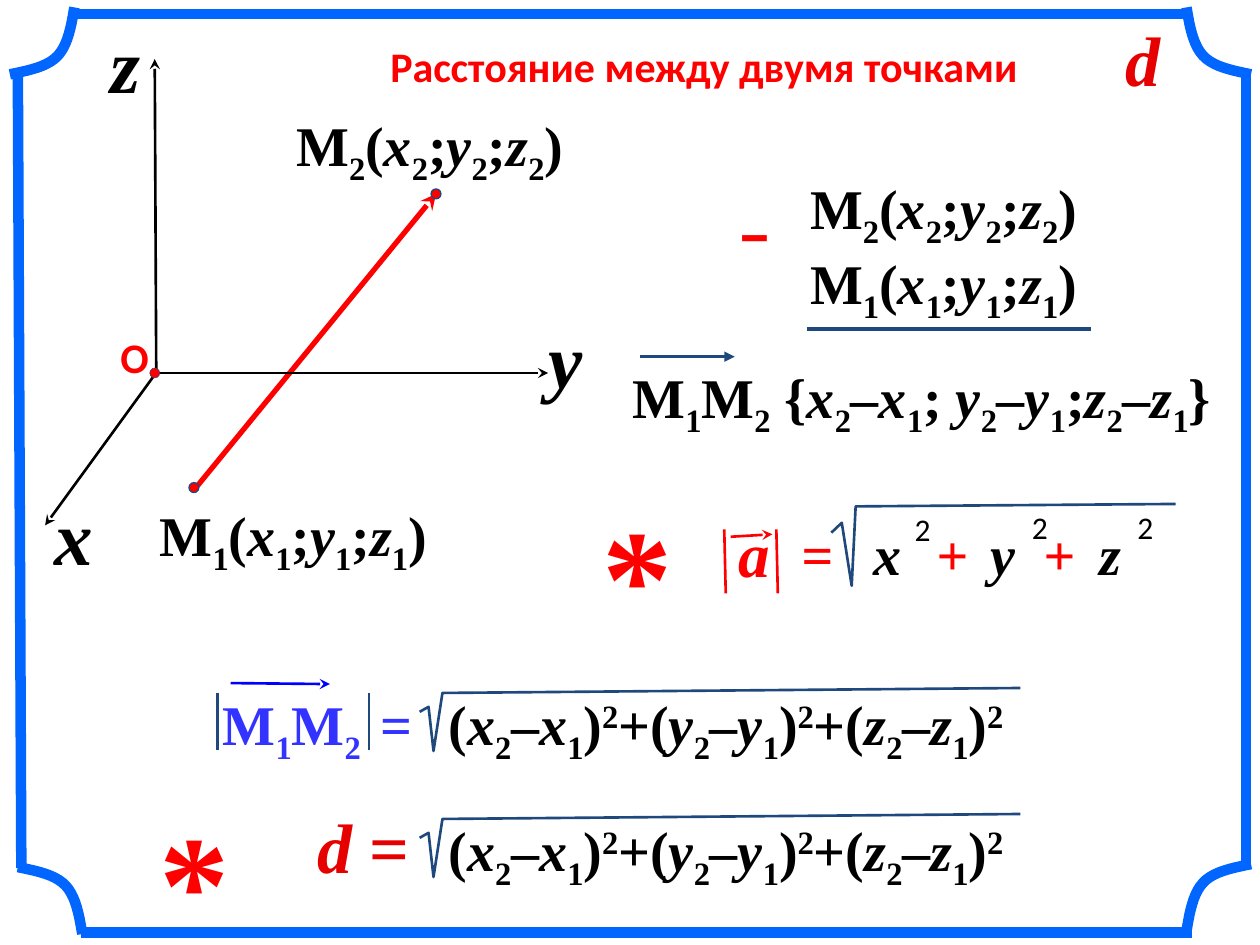
from itertools import groupby

from lxml import etree
from pptx import Presentation
from pptx.dml.color import RGBColor
from pptx.enum.shapes import MSO_CONNECTOR, MSO_SHAPE
from pptx.enum.text import MSO_AUTO_SIZE
from pptx.oxml.ns import qn
from pptx.util import Cm, Pt

STRAIGHT = MSO_CONNECTOR.STRAIGHT
OVAL = MSO_SHAPE.OVAL
GROW = MSO_AUTO_SIZE.SHAPE_TO_FIT_TEXT
SERIF, SANS = "Times New Roman", "Calibri"
BLACK, RED, DARK_RED = "000000", "FF0000", "E60000"
NAVY, BLUE, VIOLET, FRAME = "1F497D", "0000FF", "3333FF", "0066FF"
VARIABLES = "xyzad"
BASELINES = {"_": "-25000", "^": "30000"}
POINT_LABEL = "M_{0}(x_{0};y_{0};z_{0})"
DISTANCE = "(x_2–x_1)^2+(y_2–y_1)^2+(z_2–z_1)^2"
CORNER = [(0, 0), (0.38, 0.08), (0.76, 0.15), (0.97, 0.38), (1.17, 0.6), (1.24, 0.98), (1.3, 1.35)]


def color(value):
    """Return the colour for a hex string."""
    return RGBColor.from_string(value)


def styled_characters(markup):
    """Yield each character with its baseline and whether it is a variable."""
    baseline = None
    for character in markup:
        if character in BASELINES:
            baseline = BASELINES[character]
        else:
            yield character, baseline, character in VARIABLES
            baseline = None


def add_text(slide, left, top, width, height, markup, size=32, ink=BLACK,
             font=SERIF, bold=True, italic=False, wrap=True):
    """Add a text box, reading _ as subscript and ^ as superscript."""
    box = slide.shapes.add_textbox(Cm(left), Cm(top), Cm(width), Cm(height))
    frame = box.text_frame
    frame.word_wrap = wrap
    frame.auto_size = GROW
    paragraph = frame.paragraphs[0]
    for (baseline, variable), group in groupby(styled_characters(markup), key=lambda item: item[1:]):
        run = paragraph.add_run()
        run.text = "".join(item[0] for item in group)
        run.font.name = font
        run.font.size = Pt(size)
        run.font.bold = bold
        run.font.italic = italic or variable
        run.font.color.rgb = color(ink)
        if baseline:
            run.font._element.set("baseline", baseline)


def add_line(slide, start, end, ink, weight=1.5, arrow=None):
    """Add a straight line, with an arrowhead at its end if one is named."""
    line = slide.shapes.add_connector(STRAIGHT, Cm(start[0]), Cm(start[1]), Cm(end[0]), Cm(end[1]))
    line.line.color.rgb = color(ink)
    line.line.width = Pt(weight)
    if arrow:
        etree.SubElement(line.line._get_or_add_ln(), qn("a:tailEnd"), type=arrow)
    etree.SubElement(line._element.spPr, qn("a:effectLst"))


def add_outline(slide, points, ink, weight=1.5):
    """Add an open unfilled outline through the points."""
    corners = [(Cm(x), Cm(y)) for x, y in points]
    builder = slide.shapes.build_freeform(*corners[0])
    builder.add_line_segments(corners[1:], close=False)
    shape = builder.convert_to_shape()
    shape.shadow.inherit = False
    shape.fill.background()
    shape.line.color.rgb = color(ink)
    shape.line.width = Pt(weight)


def add_dot(slide, left, top, weight=0.75):
    """Add a small red point marker."""
    dot = slide.shapes.add_shape(OVAL, Cm(left), Cm(top), Cm(0.2), Cm(0.2))
    dot.shadow.inherit = False
    dot.fill.solid()
    dot.fill.fore_color.rgb = color(RED)
    dot.line.color.rgb = color(NAVY)
    dot.line.width = Pt(weight)


def add_star(slide, left, top):
    """Add a large red asterisk."""
    add_text(slide, left, top, 1.93, 3.63, "*", 80, RED, wrap=False)


def add_point_label(slide, left, top, index):
    """Add the name and coordinates of a numbered point."""
    add_text(slide, left, top, 6.07, 1.6, POINT_LABEL.format(index), wrap=False)


def bezier(points, steps=10):
    """Return points along a cubic curve."""
    fractions = [step / steps for step in range(steps + 1)]
    return [tuple((1 - t) ** 3 * a + 3 * t * (1 - t) ** 2 * b + 3 * t * t * (1 - t) * c + t ** 3 * d
                  for a, b, c, d in zip(*points)) for t in fractions]


def add_frame(slide, left, top):
    """Draw the border with its four notched corners."""
    edges = [((1.5, 0.28), (24, 0.28)), ((1.63, 18.8), (24.03, 18.8)),
             ((25.12, 1.5), (25.12, 17.5)), ((0.36, 1.5), (0.43, 17.5))]
    for (x1, y1), (x2, y2) in edges:
        add_line(slide, (left + x1, top + y1), (left + x2, top + y2), FRAME, 6)
    curve = bezier(CORNER[:4]) + bezier(CORNER[3:])[1:]
    for x, y, right, down in [(0.2, 1.5, 1, -1), (25.22, 1.5, -1, -1),
                              (0.36, 17.48, 1, 1), (25.22, 17.42, -1, 1)]:
        add_outline(slide, [(left + x + right * dx, top + y + down * dy) for dx, dy in curve], FRAME, 6)


def add_axes(slide, left, top):
    """Draw the coordinate axes and the vector between two points."""
    add_line(slide, (left + 3.07, top + 9.68), (left + 7.95, top + 3.71), RED, 3, "stealth")
    axes = [("x", (2.34, 7.27), (0.07, 10.39), (0, 9.53), 1.3),
            ("z", (2.31, 7.39), (2.28, 0.99), (1.14, 0), 1.12),
            ("y", (2.23, 7.32), (10.21, 7.32), (9.96, 5.95), 1.19)]
    for name, (x1, y1), (x2, y2), (x, y), width in axes:
        add_line(slide, (left + x1, top + y1), (left + x2, top + y2), BLACK, arrow="stealth")
        add_text(slide, left + x, top + y, width, 2.11, name, 44, wrap=False)
    add_text(slide, left + 1.34, top + 6.35, 1.6, 1.27, "О", 24, RED, SANS)
    add_point_label(slide, left + 2.13, top + 9.76, 1)
    add_point_label(slide, left + 4.88, top + 1.91, 2)
    for x, y, weight in [(2.18, 7.22, 0.25), (7.85, 3.61, 0.75), (2.97, 9.53, 0.75)]:
        add_dot(slide, left + x, top + y, weight)


def add_subtraction(slide, left, top):
    """Set out the subtraction of point coordinates and its result."""
    add_text(slide, left + 2.11, top + 0.3, 1.3, 1.96, "–", 40, RED, SANS, wrap=False)
    add_point_label(slide, left + 3.58, top, 2)
    add_point_label(slide, left + 3.58, top + 1.5, 1)
    add_line(slide, (left + 3.76, top + 3.25), (left + 9.5, top + 3.25), NAVY, 2.25)
    add_text(slide, left, top + 3.81, 12.93, 1.6, "M_1M_2 {x_2–x_1; y_2–y_1;z_2–z_1}")
    add_line(slide, (left + 0.4, top + 3.81), (left + 2.31, top + 3.81), NAVY, arrow="triangle")


def add_vector_length(slide, left, top):
    """Set out the formula for the length of a vector."""
    add_star(slide, left, top)
    add_text(slide, left + 2.74, top + 0.54, 1.4, 1.78, "a", 36, RED)
    add_line(slide, (left + 2.84, top + 1.12), (left + 3.68, top + 1.07), RED, arrow="stealth")
    for x in (2.71, 3.76):
        add_line(slide, (left + x, top + 0.97), (left + x + 0.03, top + 2.26), RED)
    for symbol, x, ink in [("=", 4.01, RED), ("x", 5.46, BLACK), ("+", 6.73, RED),
                           ("y", 7.82, BLACK), ("+", 8.89, RED), ("z", 10.03, BLACK)]:
        add_text(slide, left + x, top + 0.64, 1.2, 1.6, symbol, 32, ink, italic=True)
    for x, y in [(6.3, 0.46), (8.66, 0.41), (10.79, 0.41)]:
        add_text(slide, left + x, top + y, 0.86, 1.02, "2", 18, BLACK, SANS, bold=False, wrap=False)
    root = [(4.87, 1.04), (5.08, 0.84), (5.28, 2.11), (5.36, 0.51), (11.81, 0.46)]
    add_outline(slide, [(left + x, top + y) for x, y in root], NAVY)


def add_distance_root(slide, left, top):
    """Set out the square root of the summed squared differences."""
    add_text(slide, left + 0.33, top - 0.1, 15.1, 1.6, DISTANCE)
    root = [(0, 0.48), (0.18, 0.38), (0.28, 1.27), (0.46, 0.1), (12.11, 0)]
    add_outline(slide, [(left + x, top + y) for x, y in root], NAVY)


def add_modulus(slide, left, top):
    """Set out the modulus of the vector between the points."""
    add_line(slide, (left + 0.41, top), (left + 2.41, top + 0.02), BLUE, arrow="stealth")
    add_text(slide, left, top, 3.4, 1.6, "M_1M_2", ink=VIOLET)
    add_text(slide, left + 3.18, top, 1.2, 1.6, "=", ink=VIOLET)
    for x in (0.15, 3.2):
        add_line(slide, (left + x, top + 0.2), (left + x, top + 1.35), NAVY)


def main():
    """Build and save the slide."""
    presentation = Presentation()
    presentation.slide_width, presentation.slide_height = Cm(25.4), Cm(19.05)
    slide = presentation.slides.add_slide(presentation.slide_layouts[6])
    add_frame(slide, 0, 0)
    add_text(slide, 7.62, 0.69, 15.04, 1.27, "Расстояние между двумя точками", 24, RED, SANS)
    add_text(slide, 22.43, 0.2, 1.47, 1.96, "d", 40, DARK_RED)
    add_axes(slide, 0.84, 0.2)
    add_subtraction(slide, 12.5, 3.38)
    add_vector_length(slide, 11.89, 9.7)
    add_modulus(slide, 4.24, 13.77)
    add_text(slide, 6.15, 16.08, 2.54, 1.96, "d =", 40, DARK_RED)
    for top in (13.87, 16.41):
        add_distance_root(slide, 8.46, top)
    add_star(slide, 2.97, 15.88)
    presentation.save("out.pptx")


if __name__ == "__main__":
    main()
